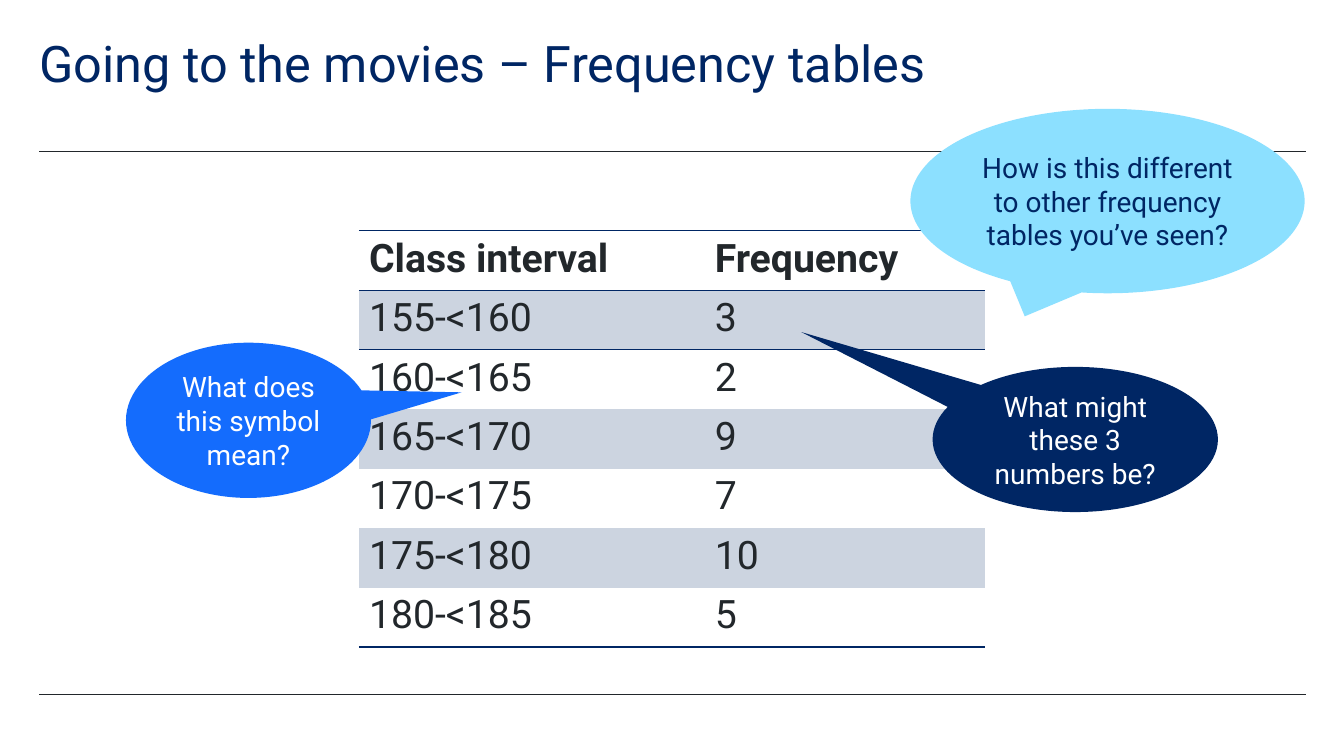
import pptx
import pptx.dml.color
import pptx.enum.shapes
import pptx.enum.text
import pptx.oxml
import pptx.oxml.ns
import pptx.util
from pptx.util import Inches

COLORS = {
    "navy": "002664",
    "blue": "146CFD",
    "sky": "8CE0FF",
    "ink": "22272B",
    "band": "CCD4E0",
    "white": "FFFFFF",
}
FONT = "Roboto"
PLAIN_TABLE_STYLE = "{2D5ABB26-0587-4C30-8999-92F81FD0307C}"
FREQUENCIES = [
    ("Class interval", "Frequency"),
    ("155-<160", "3"),
    ("160-<165", "2"),
    ("165-<170", "9"),
    ("170-<175", "7"),
    ("175-<180", "10"),
    ("180-<185", "5"),
]
CALLOUTS = [
    ("How is this different to other frequency tables you’ve seen?",
     (9.03, 1.08, 3.91, 1.83), (-0.21, 0.625), "sky", "navy"),
    ("What does this symbol mean?",
     (1.25, 3.4, 2.43, 1.54), (0.87, -0.18), "blue", "white"),
    ("What might these 3 numbers be?",
     (9.25, 3.64, 2.83, 1.44), (-0.96, -0.74), "navy", "white"),
]


def rgb(name):
    return pptx.dml.color.RGBColor.from_string(COLORS[name])


def add_span(para, text, size, color, bold=False):
    span = para.add_run()
    span.text = text
    span.font.name = FONT
    span.font.size = pptx.util.Pt(size)
    span.font.bold = bold
    span.font.color.rgb = rgb(color)


def add_rule(page, top):
    rule = page.shapes.add_connector(
        pptx.enum.shapes.MSO_CONNECTOR.STRAIGHT,
        Inches(0.39), Inches(top), Inches(12.95), Inches(top))
    rule.line.color.rgb = rgb("ink")
    rule.line.width = pptx.util.Pt(0.5)
    properties = rule._element.spPr
    properties.append(pptx.oxml.parse_xml(
        f'<a:effectLst {pptx.oxml.ns.nsdecls("a")}/>'))


def add_title(page, text):
    box = page.shapes.add_textbox(
        Inches(0.39), Inches(0.39), Inches(11.02), Inches(0.6))
    frame = box.text_frame
    frame.word_wrap = True
    frame.margin_left = frame.margin_right = 0
    frame.margin_top = frame.margin_bottom = 0
    para = frame.paragraphs[0]
    para.line_spacing = 0.9
    add_span(para, text, 36, "navy")


def add_borders(cell, sides):
    properties = cell._tc.get_or_add_tcPr()
    for position, side in enumerate(sides):
        properties.insert(position, pptx.oxml.parse_xml(
            f'<a:ln{side} {pptx.oxml.ns.nsdecls("a")} w="12700"><a:solidFill>'
            f'<a:srgbClr val="{COLORS["navy"]}"/></a:solidFill></a:ln{side}>'))


def fill_cell(cell, text, header, banded, indent):
    para = cell.text_frame.paragraphs[0]
    if indent:
        properties = para._p.get_or_add_pPr()
        properties.set("marL", str(Inches(indent)))
        properties.set("indent", "0")
    add_span(para, text, 28, "ink", header)
    if banded:
        cell.fill.solid()
        cell.fill.fore_color.rgb = rgb("band")
    else:
        cell.fill.background()


def add_frequency_table(page):
    frame = page.shapes.add_table(
        len(FREQUENCIES), 2, Inches(3.56), Inches(2.29), Inches(6.2), Inches(4.13))
    table = frame.table
    table.horz_banding = False
    table._tbl.tblPr.find(
        pptx.oxml.ns.qn("a:tableStyleId")).text = PLAIN_TABLE_STYLE
    for column, width in zip(table.columns, (2.64, 3.57)):
        column.width = Inches(width)
    last = len(FREQUENCIES) - 1
    for index, values in enumerate(FREQUENCIES):
        table.rows[index].height = Inches(0.59)
        for number, text in enumerate(values):
            cell = table.cell(index, number)
            fill_cell(cell, text, index == 0, index % 2 == 1, 0.79 * number)
            add_borders(cell, {0: "TB", 1: "T", last: "B"}.get(index, ""))


def add_callout(page, text, place, tip, fill, color):
    callout = page.shapes.add_shape(
        pptx.enum.shapes.MSO_SHAPE.OVAL_CALLOUT, *map(Inches, place))
    callout.shadow.inherit = False
    callout.adjustments[0], callout.adjustments[1] = tip
    callout.fill.solid()
    callout.fill.fore_color.rgb = rgb(fill)
    callout.line.fill.background()
    frame = callout.text_frame
    frame.word_wrap = True
    frame.vertical_anchor = pptx.enum.text.MSO_ANCHOR.MIDDLE
    para = frame.paragraphs[0]
    para.alignment = pptx.enum.text.PP_ALIGN.CENTER
    add_span(para, text, 20, color)


def main():
    deck = pptx.Presentation()
    deck.slide_width = Inches(13.33)
    deck.slide_height = Inches(7.5)
    page = deck.slides.add_slide(deck.slide_layouts[6])
    for top in (1.5, 6.89):
        add_rule(page, top)
    add_title(page, "Going to the movies – Frequency tables")
    add_frequency_table(page)
    for callout in CALLOUTS:
        add_callout(page, *callout)
    deck.save("out.pptx")


if __name__ == "__main__":
    main()
